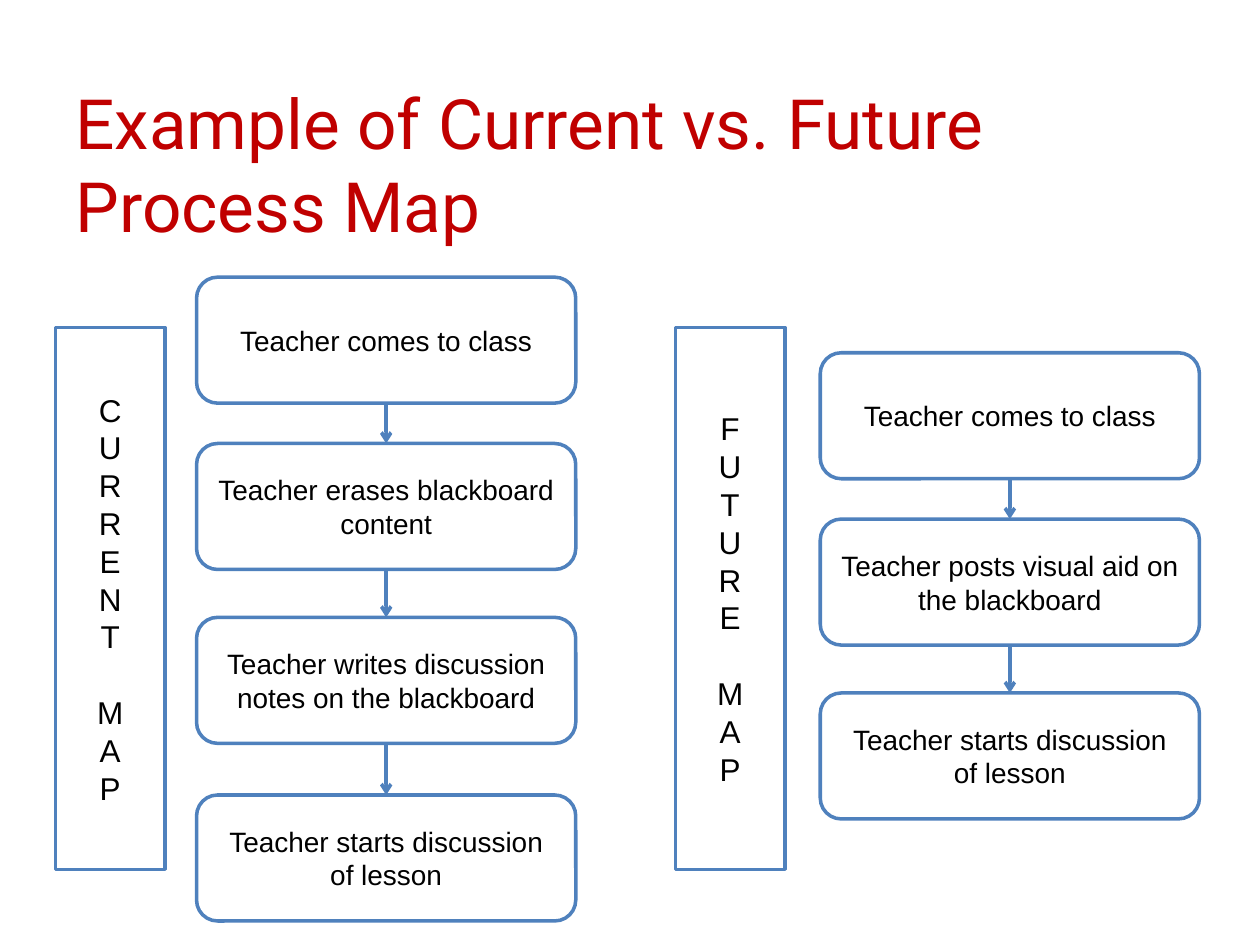
from dataclasses import dataclass
from itertools import pairwise

from lxml.etree import SubElement
from pptx import Presentation
from pptx.dml.color import RGBColor
from pptx.enum.shapes import MSO_CONNECTOR as Link, MSO_SHAPE as Shape
from pptx.enum.text import MSO_ANCHOR as Anchor, MSO_AUTO_SIZE as Fit, PP_ALIGN as Align
from pptx.oxml.ns import qn
from pptx.util import Inches, Pt


@dataclass(frozen=True)
class Theme:
    """Colours, fonts and sizes of the slide."""
    title_color: RGBColor = RGBColor(0xC0, 0x00, 0x00)
    ink: RGBColor = RGBColor(0x00, 0x00, 0x00)
    paper: RGBColor = RGBColor(0xFF, 0xFF, 0xFF)
    outline: RGBColor = RGBColor(0x4F, 0x81, 0xBD)
    title_font: str = "Roboto"
    body_font: str = "Arial"
    title_size: Pt = Pt(39.6)
    step_size: Pt = Pt(16)
    banner_size: Pt = Pt(18)
    word_gap: Pt = Pt(21.6)
    line_width: Pt = Pt(2)


THEME = Theme()
MAPS = [
    ("CURRENT MAP", 0.44, 1.56, [
        (2.2, "Teacher comes to class"),
        (3.52, "Teacher erases blackboard content"),
        (4.9, "Teacher writes discussion notes on the blackboard"),
        (6.31, "Teacher starts discussion of lesson"),
    ]),
    ("FUTURE MAP", 5.36, 6.51, [
        (2.8, "Teacher comes to class"),
        (4.12, "Teacher posts visual aid on the blackboard"),
        (5.5, "Teacher starts discussion of lesson"),
    ]),
]


def add_text(paragraph, text, size, font, color):
    """Add one formatted run to a paragraph."""
    run = paragraph.add_run()
    run.text = text
    run.font.size = size
    run.font.name = font
    run.font.color.rgb = color


def set_title(slide, text):
    """Place and fill the title placeholder."""
    title = slide.shapes.title
    title.left, title.top = Inches(0.5), Inches(0.67)
    title.width, title.height = Inches(9), Inches(1.25)
    frame = title.text_frame
    frame.word_wrap = True
    frame.auto_size = Fit.NONE
    frame.vertical_anchor = Anchor.MIDDLE
    heading = frame.paragraphs[0]
    heading.alignment = Align.LEFT
    add_text(heading, text, THEME.title_size, THEME.title_font, THEME.title_color)


def add_box(slide, kind, left, top, width, height):
    """Add an outlined white box with middle-anchored text."""
    box = slide.shapes.add_shape(
        kind, Inches(left), Inches(top), Inches(width), Inches(height))
    box.shadow.inherit = False
    box.fill.solid()
    box.fill.fore_color.rgb = THEME.paper
    box.line.color.rgb = THEME.outline
    box.line.width = THEME.line_width
    box.text_frame.word_wrap = True
    box.text_frame.vertical_anchor = Anchor.MIDDLE
    return box


def add_step(slide, left, top, text):
    """Add one rounded process step."""
    step = add_box(slide, Shape.ROUNDED_RECTANGLE, left, top, 3.01, 1)
    paragraph = step.text_frame.paragraphs[0]
    paragraph.alignment = Align.CENTER
    add_text(paragraph, text, THEME.step_size, THEME.body_font, THEME.ink)
    return step


def add_banner(slide, left, label):
    """Add a tall banner that stacks its label letter by letter."""
    frame = add_box(slide, Shape.RECTANGLE, left, 2.6, 0.87, 4.3).text_frame
    paragraph = frame.paragraphs[0]
    for word_index, word in enumerate(label.split()):
        for letter_index, letter in enumerate(word):
            if word_index or letter_index:
                paragraph = frame.add_paragraph()
            if word_index and not letter_index:
                paragraph.space_before = THEME.word_gap
            paragraph.alignment = Align.CENTER
            add_text(paragraph, letter, THEME.banner_size, THEME.body_font, THEME.ink)


def add_arrow(slide, upper, lower):
    """Join two steps with a downward arrow."""
    arrow = slide.shapes.add_connector(Link.STRAIGHT, 0, 0, 0, 0)
    arrow.begin_connect(upper, 2)
    arrow.end_connect(lower, 0)
    arrow.line.color.rgb = THEME.outline
    arrow.line.width = THEME.line_width
    SubElement(arrow.line._get_or_add_ln(), qn("a:tailEnd"), type="arrow")
    SubElement(arrow._element.spPr, qn("a:effectLst"))


def add_process_map(slide, label, banner_left, step_left, steps):
    """Add a banner and its chain of steps."""
    add_banner(slide, banner_left, label)
    boxes = [add_step(slide, step_left, top, text) for top, text in steps]
    for upper, lower in pairwise(boxes):
        add_arrow(slide, upper, lower)


def main():
    """Build and save the slide."""
    deck = Presentation()
    deck.slide_width, deck.slide_height = Inches(10), Inches(7.5)
    slide = deck.slides.add_slide(deck.slide_layouts[5])
    set_title(slide, "Example of Current vs. Future Process Map")
    for process_map in MAPS:
        add_process_map(slide, *process_map)
    deck.save("out.pptx")


if __name__ == "__main__":
    main()
